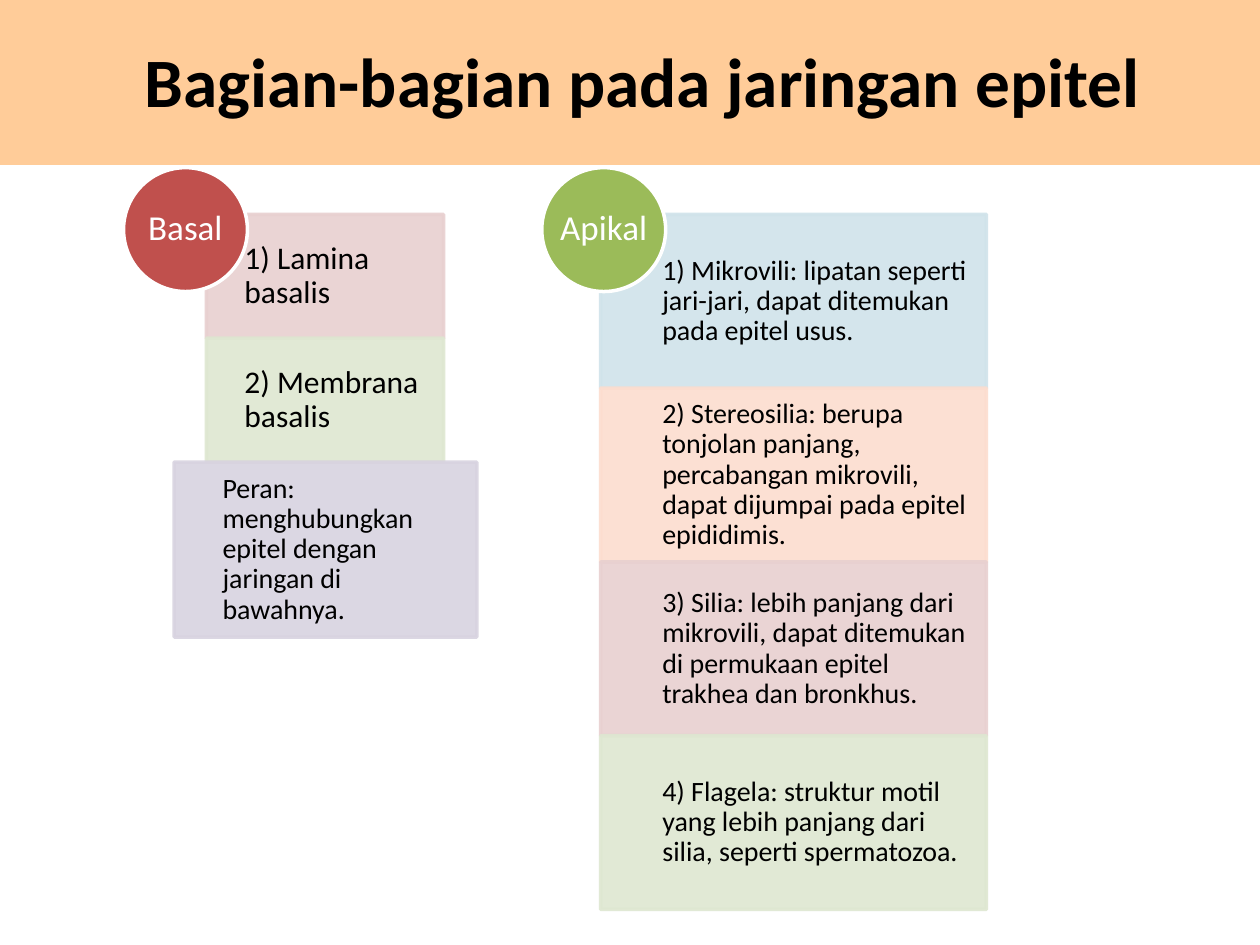
from dataclasses import dataclass

import pptx
import pptx.dml.color
import pptx.enum.shapes
import pptx.enum.text
import pptx.oxml
import pptx.oxml.ns
import pptx.util
from lxml import etree

Pt = pptx.util.Pt
RGB = pptx.dml.color.RGBColor
Kind = pptx.enum.shapes.MSO_SHAPE
Align = pptx.enum.text.PP_ALIGN
Anchor = pptx.enum.text.MSO_ANCHOR

BLACK = RGB(0x00, 0x00, 0x00)
WHITE = RGB(0xFF, 0xFF, 0xFF)
PEACH = RGB(0xFF, 0xCC, 0x99)
RED = RGB(0xC0, 0x50, 0x4D)
GREEN = RGB(0x9B, 0xBB, 0x59)
ROSE = RGB(0xE8, 0xD0, 0xD0)
SAGE = RGB(0xDE, 0xE7, 0xD1)
LILAC = RGB(0xD8, 0xD3, 0xE0)
SKY = RGB(0xD0, 0xE3, 0xEA)
CORAL = RGB(0xFC, 0xDD, 0xCF)
FONT = "Calibri"
TOP = 122.5


@dataclass
class Row:
    text: str
    fill: RGB


@dataclass
class Stack:
    left: float
    top: float
    width: float
    step: float
    indent: float
    pad: float
    size: float
    rows: list[Row]


@dataclass
class Badge:
    text: str
    left: float
    fill: RGB


STACKS = [
    Stack(118, TOP, 135.5, 70.8, 21.7, 10, 18, [
        Row("1) Lamina basalis", ROSE),
        Row("2) Membrana basalis", SAGE),
    ]),
    Stack(99.5, TOP + 2 * 70.8, 173, 100, 27.7, 9, 16, [
        Row("Peran: menghubungkan epitel dengan jaringan di bawahnya.", LILAC),
    ]),
    Stack(343.2, TOP, 220.5, 99.3, 35.3, 9, 16, [
        Row("1) Mikrovili: lipatan seperti jari-jari, dapat ditemukan pada epitel usus.", SKY),
        Row("2) Stereosilia: berupa tonjolan panjang, percabangan mikrovili, "
            "dapat dijumpai pada epitel epididimis.", CORAL),
        Row("3) Silia: lebih panjang dari mikrovili, dapat ditemukan di permukaan "
            "epitel trakhea dan bronkhus.", ROSE),
        Row("4) Flagela: struktur motil yang lebih panjang dari silia, "
            "seperti spermatozoa.", SAGE),
    ]),
]
BADGES = [Badge("Basal", 70.6, RED), Badge("Apikal", 309.6, GREEN)]


def add_box(slide, kind, left: float, top: float, width: float, height: float, fill: RGB):
    box = slide.shapes.add_shape(kind, Pt(left), Pt(top), Pt(width), Pt(height))
    box.shadow.inherit = False
    box.fill.solid()
    box.fill.fore_color.rgb = fill
    return box


def set_line(box, color: RGB) -> None:
    box.line.color.rgb = color
    box.line.width = Pt(2)


def set_text(box, text: str, size: float, color: RGB, align, pads: tuple) -> None:
    frame = box.text_frame
    frame.text = text
    frame.word_wrap = True
    frame.auto_size = pptx.enum.text.MSO_AUTO_SIZE.NONE
    frame.vertical_anchor = Anchor.MIDDLE
    (frame.margin_left, frame.margin_top,
     frame.margin_right, frame.margin_bottom) = map(Pt, pads)
    par = frame.paragraphs[0]
    par.alignment = align
    par.line_spacing = 0.9
    font = par.runs[0].font
    font.name = FONT
    font.size = Pt(size)
    font.color.rgb = color


def fade(box) -> None:
    for tint in box.element.spPr.iter(pptx.oxml.ns.qn("a:srgbClr")):
        etree.SubElement(tint, pptx.oxml.ns.qn("a:alpha"), val="90000")


def draw_stack(slide, stack: Stack) -> None:
    pads = (stack.indent, stack.pad, stack.pad, stack.pad)
    for i, row in enumerate(stack.rows):
        top = stack.top + i * stack.step
        box = add_box(slide, Kind.RECTANGLE, stack.left, top, stack.width, stack.step, row.fill)
        set_line(box, row.fill)
        fade(box)
        set_text(box, row.text, stack.size, BLACK, Align.LEFT, pads)


def draw_badge(slide, badge: Badge) -> None:
    box = add_box(slide, Kind.OVAL, badge.left, 95.8, 70.8, 70.8, badge.fill)
    set_line(box, WHITE)
    set_text(box, badge.text, 20, WHITE, Align.CENTER, (0, 0, 0, 0))


def draw_title(slide) -> None:
    band = add_box(slide, Kind.RECTANGLE, 0, 0, 720, 94.3, PEACH)
    band.line.fill.background()
    title = slide.shapes.title
    title.element.addprevious(band.element)
    title.left, title.top, title.width, title.height = map(Pt, (21, 26, 678, 39.6))
    set_text(title, "Bagian-bagian pada jaringan epitel", 39.6, BLACK, Align.CENTER, (0, 0, 0, 0))
    par = title.text_frame.paragraphs[0]
    par.line_spacing = 1.0
    par.runs[0].font.bold = True
    par._p.get_or_add_pPr().set("marL", str(Pt(14.4)))


def main() -> None:
    deck = pptx.Presentation()
    deck.slide_width, deck.slide_height = Pt(720), Pt(540)
    slide = deck.slides.add_slide(deck.slide_layouts[5])
    draw_title(slide)
    for stack in STACKS:
        draw_stack(slide, stack)
    for badge in BADGES:
        draw_badge(slide, badge)
    deck.save("out.pptx")


if __name__ == "__main__":
    main()
